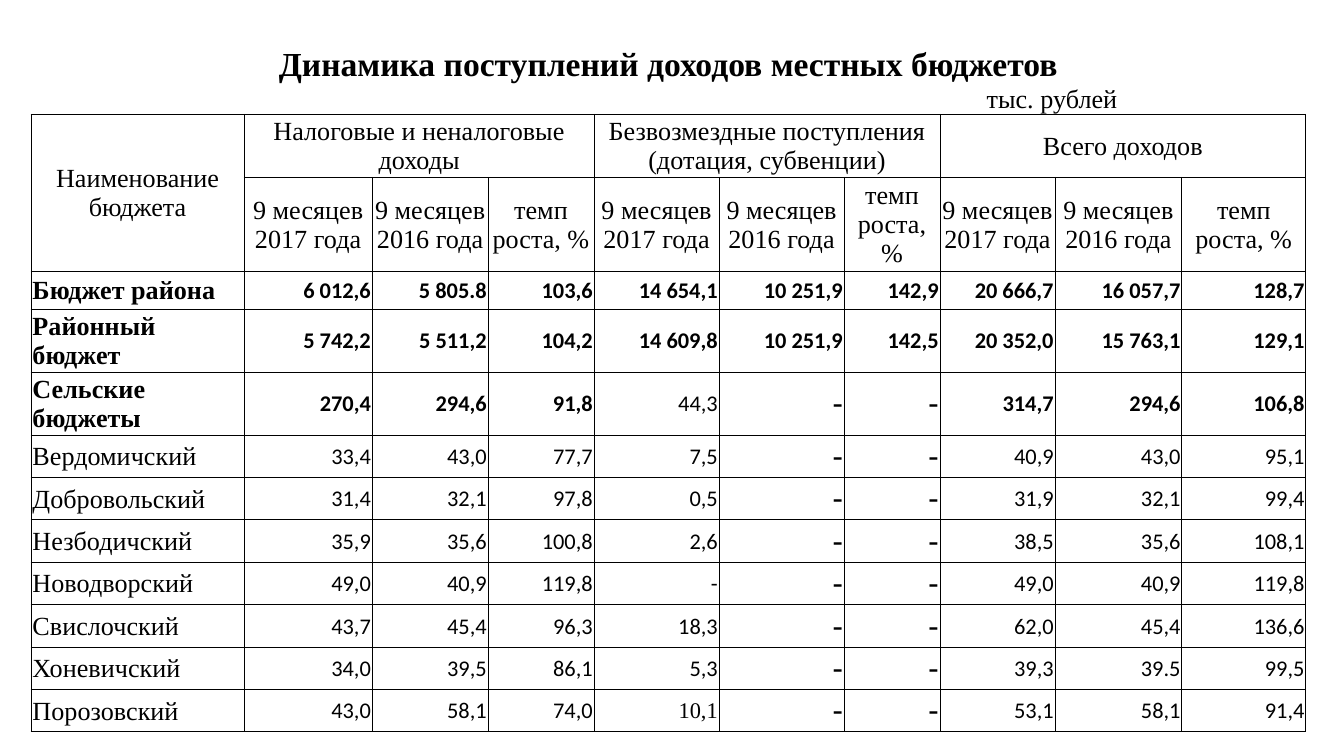
from lxml.etree import SubElement
from pptx import Presentation
from pptx.dml.color import RGBColor
from pptx.enum.text import MSO_ANCHOR, PP_ALIGN
from pptx.oxml.ns import qn
from pptx.util import Pt

BLACK = RGBColor(0, 0, 0)
SERIF, SANS = "Times New Roman", "Calibri"
INSET = 0.72

COLUMN_WIDTHS = [114.1, 68.6, 62.1, 32.3, 24.5, 67, 40.3, 26.7,
                 51.4, 61.6, 36.5, 31.5, 33.4, 33]
ROW_HEIGHTS = [22.5, 15.5, 33.8, 50.2, 20.4, 33.8, 33.8] + [22.7] * 7

# First and last grid column of each visible column
BODY_SPANS = [(0, 0), (1, 1), (2, 2), (3, 4), (5, 5), (6, 7),
              (8, 8), (9, 9), (10, 11), (12, 13)]
UNIT_SPANS = [(0, 0), (1, 3), (4, 6), (7, 8), (9, 10), (11, 12), (13, 13)]
GROUPS = [
    ("Налоговые и неналоговые доходы", 1, 4),
    ("Безвозмездные поступления (дотация, субвенции)", 5, 8),
    ("Всего доходов", 9, 13),
]
GROWTH = "темп\nроста, %"
PERIODS = ["9 месяцев 2017 года", "9 месяцев 2016 года", GROWTH] * 2 + [
    "9 месяцев\n2017 года", "9 месяцев\n2016 года", GROWTH]

BUDGETS = [
    ("Бюджет района", "6 012,6", "5 805.8", "103,6", "14 654,1", "10 251,9",
     "142,9", "20 666,7", "16 057,7", "128,7"),
    ("Районный бюджет", "5 742,2", "5 511,2", "104,2", "14 609,8", "10 251,9",
     "142,5", "20 352,0", "15 763,1", "129,1"),
    ("Сельские бюджеты", "270,4", "294,6", "91,8", "44,3", "-", "-",
     "314,7", "294,6", "106,8"),
    ("Вердомичский", "33,4", "43,0", "77,7", "7,5", "-", "-",
     "40,9", "43,0", "95,1"),
    ("Добровольский", "31,4", "32,1", "97,8", "0,5", "-", "-",
     "31,9", "32,1", "99,4"),
    ("Незбодичский", "35,9", "35,6", "100,8", "2,6", "-", "-",
     "38,5", "35,6", "108,1"),
    ("Новодворский", "49,0", "40,9", "119,8", "-", "-", "-",
     "49,0", "40,9", "119,8"),
    ("Свислочский", "43,7", "45,4", "96,3", "18,3", "-", "-",
     "62,0", "45,4", "136,6"),
    ("Хоневичский", "34,0", "39,5", "86,1", "5,3", "-", "-",
     "39,3", "39.5", "99,5"),
    ("Порозовский", "43,0", "58,1", "74,0", "10,1", "-", "-",
     "53,1", "58,1", "91,4"),
]
TOTAL_ROWS = 3
FIRST_BUDGET_ROW = 4


def set_borders(cell, visible_sides):
    properties = cell._tc.get_or_add_tcPr()
    for side in "LRTB":
        line = SubElement(properties, qn(f"a:ln{side}"), w=str(Pt(0.5)))
        if side in visible_sides:
            fill = SubElement(line, qn("a:solidFill"))
            SubElement(fill, qn("a:srgbClr"), val=str(BLACK))
        else:
            SubElement(line, qn("a:noFill"))


def style_grid(table):
    for row_index, row in enumerate(table.rows):
        sides = {0: "", 1: "B"}.get(row_index, "LRTB")
        for cell in row.cells:
            set_borders(cell, sides)
            cell.fill.background()
            cell.margin_left = cell.margin_right = cell.margin_top = Pt(INSET)
            cell.margin_bottom = 0
            cell.text_frame.paragraphs[0].font.size = Pt(8)


def merge(table, row, first, last, last_row=None):
    cell = table.cell(row, first)
    end_row = row if last_row is None else last_row
    if (end_row, last) != (row, first):
        cell.merge(table.cell(end_row, last))
    return cell


def write(cell, text, align=PP_ALIGN.CENTER, size=14, font=SERIF, bold=False,
          anchor=MSO_ANCHOR.MIDDLE):
    cell.text = text
    cell.vertical_anchor = anchor
    for paragraph in cell.text_frame.paragraphs:
        paragraph.alignment = align
        paragraph.font.size = Pt(size)
        paragraph.font.name = font
        paragraph.font.bold = bold
        paragraph.font.color.rgb = BLACK


def add_heading(table):
    title = merge(table, 0, 0, len(COLUMN_WIDTHS) - 1)
    write(title, "Динамика поступлений доходов местных бюджетов",
          size=18, bold=True, anchor=MSO_ANCHOR.BOTTOM)
    for first, last in UNIT_SPANS:
        unit = merge(table, 1, first, last)
        if first == 9:
            write(unit, "тыс. рублей", PP_ALIGN.LEFT, anchor=MSO_ANCHOR.BOTTOM)
            unit.margin_left = Pt(25)


def add_column_headers(table):
    write(merge(table, 2, 0, 0, last_row=3), "Наименование бюджета")
    for group, first, last in GROUPS:
        write(merge(table, 2, first, last), group)
    for period, (first, last) in zip(PERIODS, BODY_SPANS[1:]):
        write(merge(table, 3, first, last), period)


def add_budget(table, index, budget):
    is_total = index < TOTAL_ROWS
    for column, (text, span) in enumerate(zip(budget, BODY_SPANS)):
        cell = merge(table, FIRST_BUDGET_ROW + index, *span)
        if column == 0:
            write(cell, text, PP_ALIGN.LEFT, bold=is_total)
            continue
        missing_grant = text == "-" and column in (5, 6)
        bold = is_total and text not in ("-", "44,3")
        write(cell, text, PP_ALIGN.RIGHT, 18 if missing_grant else 12,
              SERIF if text == "10,1" else SANS, bold)


def main():
    presentation = Presentation()
    presentation.slide_width, presentation.slide_height = Pt(720), Pt(405)
    slide = presentation.slides.add_slide(presentation.slide_layouts[6])

    # Table grid
    table = slide.shapes.add_table(
        len(ROW_HEIGHTS), len(COLUMN_WIDTHS), Pt(16.7), Pt(22.5),
        Pt(sum(COLUMN_WIDTHS)), Pt(sum(ROW_HEIGHTS))).table
    table.first_row = table.horz_banding = False
    for column, width in zip(table.columns, COLUMN_WIDTHS):
        column.width = Pt(width)
    for row, height in zip(table.rows, ROW_HEIGHTS):
        row.height = Pt(height)
    style_grid(table)

    # Title, units and column headers
    add_heading(table)
    add_column_headers(table)

    # Budget figures
    for index, budget in enumerate(BUDGETS):
        add_budget(table, index, budget)

    presentation.save("out.pptx")


if __name__ == "__main__":
    main()
